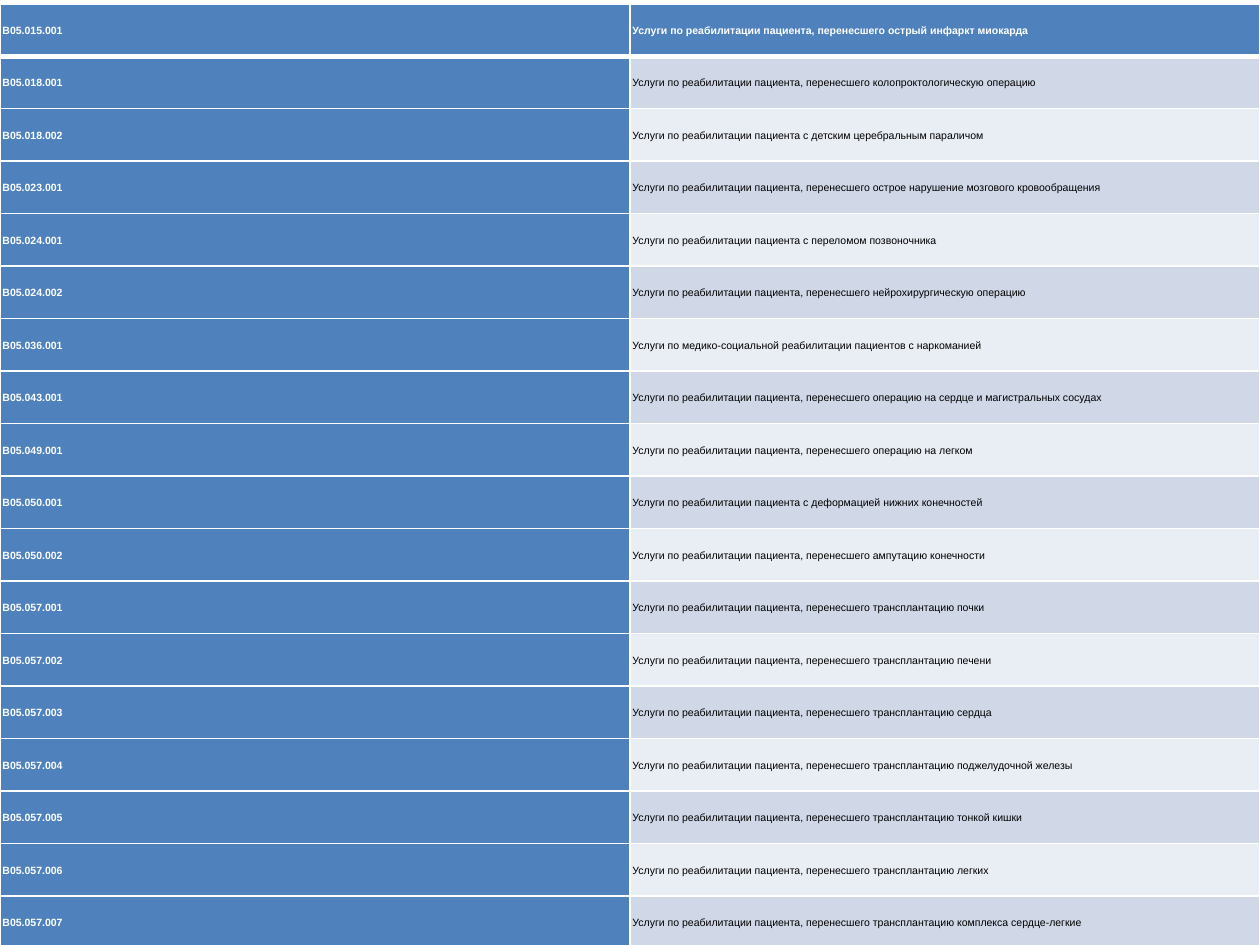
from dataclasses import dataclass

from lxml import etree
from pptx import Presentation
from pptx.dml.color import RGBColor
from pptx.enum import text
from pptx.oxml import ns
from pptx.util import Inches, Pt


@dataclass(frozen=True)
class Theme:
    font: str = "Arial"
    size: float = 6
    accent: str = "4F81BD"
    bands: tuple = ("D0D8E8", "E9EDF4")
    light: str = "FFFFFF"
    dark: str = "000000"
    rule: float = 1
    heading_rule: float = 3
    inset: float = 0.02


REHAB = "Услуги по реабилитации пациента"
AFTER = f"{REHAB}, перенесшего"
TRANSPLANT = f"{AFTER} трансплантацию"

SERVICES = [
    ("B05.015.001", f"{AFTER} острый инфаркт миокарда"),
    ("B05.018.001", f"{AFTER} колопроктологическую операцию"),
    ("B05.018.002", f"{REHAB} с детским церебральным параличом"),
    ("B05.023.001", f"{AFTER} острое нарушение мозгового кровообращения"),
    ("B05.024.001", f"{REHAB} с переломом позвоночника"),
    ("B05.024.002", f"{AFTER} нейрохирургическую операцию"),
    ("B05.036.001", "Услуги по медико-социальной реабилитации пациентов с наркоманией"),
    ("B05.043.001", f"{AFTER} операцию на сердце и магистральных сосудах"),
    ("B05.049.001", f"{AFTER} операцию на легком"),
    ("B05.050.001", f"{REHAB} с деформацией нижних конечностей"),
    ("B05.050.002", f"{AFTER} ампутацию конечности"),
    ("В05.057.001", f"{TRANSPLANT} почки"),
    ("В05.057.002", f"{TRANSPLANT} печени"),
    ("В05.057.003", f"{TRANSPLANT} сердца"),
    ("В05.057.004", f"{TRANSPLANT} поджелудочной железы"),
    ("В05.057.005", f"{TRANSPLANT} тонкой кишки"),
    ("В05.057.006", f"{TRANSPLANT} легких"),
    ("В05.057.007", f"{TRANSPLANT} комплекса сердце-легкие"),
]


class SlideBuilder:
    def __init__(self, slide, theme):
        self.slide = slide
        self.theme = theme

    def table(self, rows, left, top, width, height):
        """Add a table with an accented first row and first column."""
        frame = self.slide.shapes.add_table(
            len(rows), len(rows[0]),
            Inches(left), Inches(top), Inches(width), Inches(height))
        grid = frame.table
        for column in grid.columns:
            column.width = Inches(width / len(rows[0]))
        for r, values in enumerate(rows):
            grid.rows[r].height = Inches(height / len(rows))
            for c, value in enumerate(values):
                self.cell(grid.cell(r, c), value, r, c)

    def cell(self, cell, value, row, column):
        theme = self.theme
        accented = row == 0 or column == 0
        self.borders(cell,
                     top=theme.heading_rule if row == 1 else theme.rule,
                     bottom=theme.heading_rule if row == 0 else theme.rule)
        cell.fill.solid()
        cell.fill.fore_color.rgb = RGBColor.from_string(
            theme.accent if accented else theme.bands[(row - 1) % 2])
        cell.vertical_anchor = text.MSO_ANCHOR.MIDDLE
        cell.margin_left = cell.margin_right = Inches(theme.inset)
        cell.margin_top = cell.margin_bottom = Inches(theme.inset)

        paragraph = cell.text_frame.paragraphs[0]
        paragraph.line_spacing = 1.15
        paragraph.space_after = Pt(10)
        run = paragraph.add_run()
        run.text = value
        run.font.name = theme.font
        run.font.size = Pt(theme.size)
        run.font.bold = accented
        run.font.color.rgb = RGBColor.from_string(
            theme.light if accented else theme.dark)

    def borders(self, cell, top, bottom):
        """Draw the cell's edges; call before filling, as the schema orders them."""
        properties = cell._tc.get_or_add_tcPr()
        rule = self.theme.rule
        for side, width in (("L", rule), ("R", rule), ("T", top), ("B", bottom)):
            line = etree.SubElement(properties, ns.qn(f"a:ln{side}"), w=str(Pt(width)))
            fill = etree.SubElement(line, ns.qn("a:solidFill"))
            etree.SubElement(fill, ns.qn("a:srgbClr"), val=self.theme.light)


def main():
    deck = Presentation()
    deck.slide_width, deck.slide_height = Inches(10), Inches(7.5)
    slide = deck.slides.add_slide(deck.slide_layouts[6])
    SlideBuilder(slide, Theme()).table(SERVICES, left=0, top=0.03, width=10, height=7.5)
    deck.save("out.pptx")


if __name__ == "__main__":
    main()
